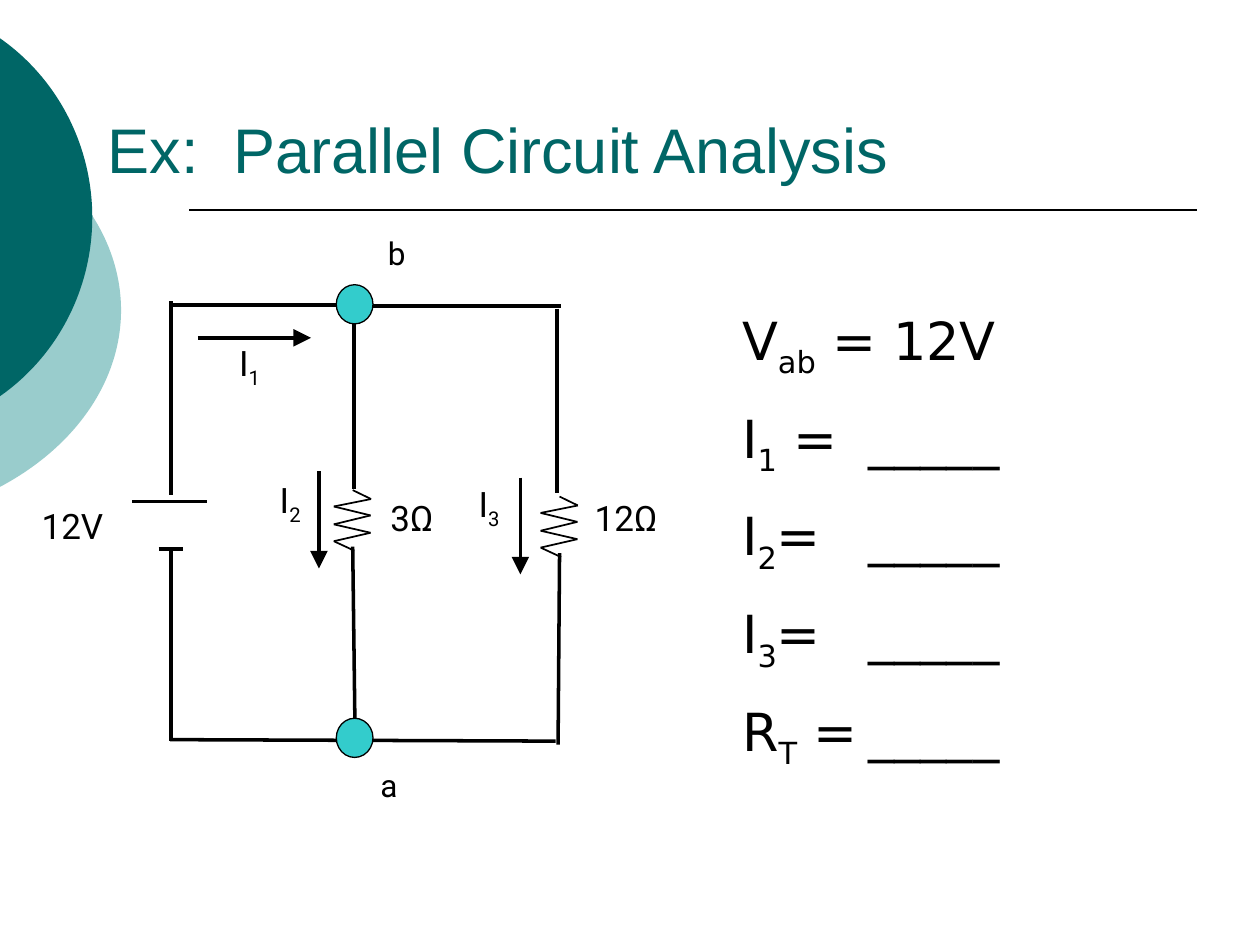
"""Builds a slide that analyses a parallel circuit with two resistors."""
from dataclasses import dataclass
from itertools import pairwise

from lxml import etree
from pptx import Presentation
from pptx import util as u
from pptx.dml.color import RGBColor
from pptx.enum import shapes, text
from pptx.oxml import ns


@dataclass(frozen=True)
class Theme:
    """Colours, fonts, type sizes and line widths of the slide."""
    ink: RGBColor = RGBColor(0x00, 0x00, 0x00)
    paper: RGBColor = RGBColor(0xFF, 0xFF, 0xFF)
    teal: RGBColor = RGBColor(0x00, 0x66, 0x66)
    mist: RGBColor = RGBColor(0x99, 0xCC, 0xCC)
    node: RGBColor = RGBColor(0x33, 0xCC, 0xCC)
    title_font: str = "Arial"
    label_font: str = "Roboto"
    equation_font: str = "DejaVu Sans"
    title_size: int = 36
    equation_size: int = 30
    value_size: int = 20
    node_size: int = 18
    thick: float = 2
    thin: float = 1
    outline: float = 0.75


T = Theme()

WIRES = [
    (7.14, 6.15, 7.14, 9.86), (7.11, 11.02, 7.16, 14.99),
    (3.43, 14.91, 11.2, 14.94), (3.48, 6.15, 7.16, 6.15),
    (3.45, 11.05, 3.45, 14.94), (3.45, 6.07, 3.45, 9.98),
    (7.11, 6.17, 11.3, 6.17), (11.23, 6.22, 11.23, 9.93),
    (11.28, 11.15, 11.25, 15.01),
]
BATTERY_PLATES = [(2.67, 10.11, 4.17, 10.11), (3.2, 11.07, 3.68, 11.07)]
CURRENT_ARROWS = [
    (3.99, 6.81, 6.27, 6.81), (6.43, 9.5, 6.43, 11.46),
    (10.49, 9.63, 10.49, 11.58),
]
RESISTORS = [(7.11, 9.88), (11.28, 10.01)]
ZIGZAG = [(0, 0), (0.37, 0.18), (-0.38, 0.33), (0.36, 0.51),
          (-0.38, 0.69), (0.36, 0.86), (-0.38, 1.03), (0.03, 1.22)]
NODES = [(6.78, 5.74), (6.78, 14.48)]
VALUES = [("12V", 0.74, 10.08, 1.9), ("3Ω", 7.77, 9.91, 2.08),
          ("12Ω", 11.89, 9.91, 1.47)]
NODE_NAMES = [("a", 7.57, 15.34, 1.12), ("b", 7.72, 4.62, 0.91)]
CURRENTS = [("1", 4.72, 6.78), ("2", 5.54, 9.55), ("3", 9.55, 9.63)]
EQUATIONS = [("V", "ab", " = 12V"), ("I", "1", " = \t_____"),
             ("I", "2", "= \t_____"), ("I", "3", "= \t_____"),
             ("R", "T", " =\t_____")]


def set_font(font, name, size, color=T.ink):
    """Give a font its face, size and colour."""
    font.name, font.size = name, u.Pt(size)
    font.color.rgb = color


def write(p, base, sub="", rest=""):
    """Write a base, an optional subscript and the remaining text."""
    for part, lowered in ((base, False), (sub, True), (rest, False)):
        if part:
            r = p.add_run()
            r.text = part
            if lowered:
                r.font._element.set("baseline", "-25000")


def add_line(s, ends, width=T.thick, arrow=False):
    """Draw a straight line, with an arrowhead at its end if asked."""
    c = s.shapes.add_connector(shapes.MSO_CONNECTOR.STRAIGHT, *map(u.Cm, ends))
    c.line.color.rgb, c.line.width = T.ink, u.Pt(width)
    if arrow:
        etree.SubElement(c.line._get_or_add_ln(), ns.qn("a:tailEnd"),
                         type="triangle", w="lg", len="lg")
    etree.SubElement(c._element.spPr, ns.qn("a:effectLst"))


def add_oval(s, box, color, outlined=False):
    """Draw a filled oval, with a fine outline if asked."""
    sp = s.shapes.add_shape(shapes.MSO_SHAPE.OVAL, *map(u.Cm, box))
    sp.shadow.inherit = False
    sp.fill.solid()
    sp.fill.fore_color.rgb = color
    if outlined:
        sp.line.color.rgb, sp.line.width = T.ink, u.Pt(T.outline)
    else:
        sp.line.fill.background()


def add_label(s, parts, x, y, w, h, size, filled=True):
    """Place a circuit label, on a white ground if filled."""
    sp = s.shapes.add_textbox(*map(u.Cm, (x, y, w, h)))
    if filled:
        sp.fill.solid()
        sp.fill.fore_color.rgb = T.paper
    tf = sp.text_frame
    tf.word_wrap = True
    tf.margin_left = tf.margin_right = tf.margin_top = tf.margin_bottom = u.Cm(0.1)
    p = tf.paragraphs[0]
    p.alignment = text.PP_ALIGN.LEFT
    set_font(p.font, T.label_font, size)
    write(p, *parts)


def add_resistor(s, x, y):
    """Draw a zigzag resistor downwards from its upper terminal."""
    for (x1, y1), (x2, y2) in pairwise(ZIGZAG):
        add_line(s, (x + x1, y + y1, x + x2, y + y2), T.thin)


def add_title(s, words):
    """Move, fill and format the title placeholder."""
    sp = s.shapes.title
    sp.left, sp.top, sp.width, sp.height = map(u.Cm, (1.92, 1.77, 21.59, 2.11))
    tf = sp.text_frame
    tf.text = words
    tf.vertical_anchor = text.MSO_ANCHOR.BOTTOM
    p = tf.paragraphs[0]
    p.alignment = text.PP_ALIGN.LEFT
    set_font(p.font, T.title_font, T.title_size, T.teal)


def add_equations(s):
    """List the quantities to find, with half a line between them."""
    tf = s.shapes.add_textbox(*map(u.Cm, (14.71, 6.08, 9.27, 9.14))).text_frame
    tf.word_wrap = True
    for i, parts in enumerate(EQUATIONS):
        p = tf.add_paragraph() if i else tf.paragraphs[0]
        before = etree.SubElement(p._p.get_or_add_pPr(), ns.qn("a:spcBef"))
        etree.SubElement(before, ns.qn("a:spcPct"), val="50000")
        set_font(p.font, T.equation_font, T.equation_size)
        write(p, *parts)


def add_circuit(s):
    """Draw the circuit with its labels, wires, parts and currents."""
    for value, x, y, w in VALUES:
        add_label(s, (value,), x, y, w, 1.35, T.value_size)
    for name, x, y, w in NODE_NAMES:
        add_label(s, (name,), x, y, w, 1.2, T.node_size)
    for ends in WIRES + BATTERY_PLATES:
        add_line(s, ends)
    for place in RESISTORS:
        add_resistor(s, *place)
    for place in NODES:
        add_oval(s, (*place, 0.74, 0.79), T.node, outlined=True)
    for ends in CURRENT_ARROWS:
        add_line(s, ends, arrow=True)
    for index, x, y in CURRENTS:
        add_label(s, ("I", index), x, y, 1.47, 1.35, T.value_size, filled=False)


def main():
    """Build the slide and save it."""
    prs = Presentation()
    prs.slide_width, prs.slide_height = u.Cm(25.4), u.Cm(19.05)
    s = prs.slides.add_slide(prs.slide_layouts[5])
    add_oval(s, (-8.99, 1.91, 11.43, 8.69), T.mist)
    add_oval(s, (-6.73, 0, 8.59, 8.76), T.teal)
    add_line(s, (3.81, 4.24, 24.13, 4.24), T.thin)
    add_title(s, "Ex:  Parallel Circuit Analysis")
    add_equations(s)
    add_circuit(s)
    prs.save("out.pptx")


if __name__ == "__main__":
    main()
